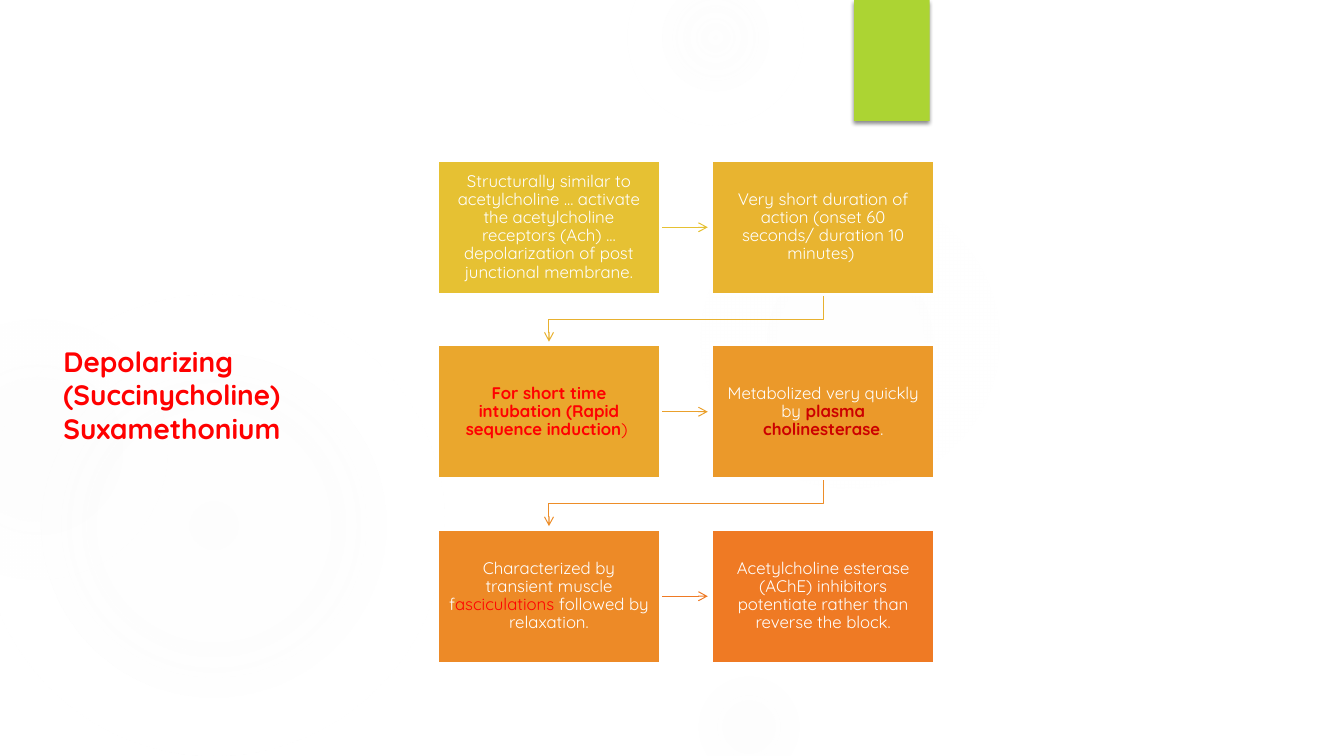
from lxml import etree
from pptx import Presentation
from pptx.dml.color import RGBColor
from pptx.enum.shapes import MSO_CONNECTOR, MSO_SHAPE
from pptx.enum.text import MSO_ANCHOR, PP_ALIGN
from pptx.oxml import parse_xml
from pptx.oxml.ns import nsdecls, qn
from pptx.util import Inches, Pt

OVAL, RECTANGLE = MSO_SHAPE.OVAL, MSO_SHAPE.RECTANGLE
STRAIGHT = MSO_CONNECTOR.STRAIGHT
MIDDLE = MSO_ANCHOR.MIDDLE
LEFT, CENTER = PP_ALIGN.LEFT, PP_ALIGN.CENTER
RIGHT_SIDE = 3

FONT = "Quicksand"
WHITE = RGBColor(0xFF, 0xFF, 0xFF)
RED = RGBColor(0xFF, 0x00, 0x00)
DARK_RED = RGBColor(0xCC, 0x00, 0x00)
GREEN = RGBColor(0xAC, 0xD4, 0x33)
GLOW = "F7F7F7"

# Content
TITLE = ["Depolarizing (Succinycholine)", "Suxamethonium"]

# Each step: fill, then runs of (text, colour, bold)
STEPS = [
    (RGBColor(0xE6, 0xC1, 0x33), [
        ("Structurally similar to acetylcholine … activate the acetylcholine "
         "receptors (Ach) … depolarization of post junctional membrane.", WHITE, False)]),
    (RGBColor(0xE8, 0xB4, 0x30), [
        ("Very short duration of action (onset 60 seconds/ duration 10 minutes) ",
         WHITE, False)]),
    (RGBColor(0xEA, 0xA7, 0x2D), [
        ("For short time intubation (Rapid sequence induction", RED, True),
        (") ", RED, False)]),
    (RGBColor(0xEB, 0x99, 0x2A), [
        ("Metabolized very quickly by ", WHITE, False),
        ("plasma cholinesterase", DARK_RED, True),
        (".", WHITE, False)]),
    (RGBColor(0xED, 0x8A, 0x27), [
        ("Characterized by transient muscle f", WHITE, False),
        ("asciculations ", RED, False),
        ("followed by relaxation.", WHITE, False)]),
    (RGBColor(0xEF, 0x7A, 0x24), [
        ("Acetylcholine esterase (AChE) inhibitors potentiate rather than "
         "reverse the block.", WHITE, False)]),
]
ARROW_COLORS = [
    RGBColor(0xE6, 0xC1, 0x33), RGBColor(0xE8, 0xB1, 0x2F), RGBColor(0xEA, 0xA0, 0x2C),
    RGBColor(0xED, 0x8D, 0x28), RGBColor(0xEF, 0x7A, 0x24),
]

# Background circles: left, top, diameter, (position %, opacity %) stops
CIRCLES = [
    (6.89, 1.83, 3.08, [(0, 7), (36, 6), (69, 0)]),
    (6.22, -0.5, 1.75, [(0, 14), (36, 7), (73, 0)]),
    (6.89, 6.67, 1.08, [(0, 14), (36, 7), (66, 0)]),
    (-0.17, 2.92, 4.58, [(0, 11), (36, 10), (75, 0)]),
    (-0.92, 3.17, 2.58, [(0, 8), (36, 8), (72, 0)]),
]

# Step grid, in inches
COLUMNS = 2
GRID_LEFT, GRID_TOP = 4.34, 1.59
BOX_WIDTH, BOX_HEIGHT = 2.21, 1.33
COLUMN_PITCH, ROW_PITCH = 2.72, 1.83
ARROW_LENGTH = 0.47


def add_plain_shape(page, kind, left, top, width, height):
    shape = page.shapes.add_shape(
        kind, Inches(left), Inches(top), Inches(width), Inches(height))
    shape.shadow.inherit = False
    shape.line.fill.background()
    return shape


def add_circle(page, left, top, size, stops):
    circle = add_plain_shape(page, OVAL, left, top, size, size)
    stop_xml = "".join(
        f'<a:gs pos="{place * 1000}"><a:srgbClr val="{GLOW}">'
        f'<a:alpha val="{opacity * 1000}"/></a:srgbClr></a:gs>'
        for place, opacity in stops)
    gradient = parse_xml(
        f'<a:gradFill {nsdecls("a")}><a:gsLst>{stop_xml}</a:gsLst>'
        '<a:path path="circle"><a:fillToRect l="50000" t="50000" r="50000" '
        'b="50000"/></a:path></a:gradFill>')
    circle.fill.background()
    properties = circle.element.spPr
    properties.replace(properties.find(qn("a:noFill")), gradient)


def add_span(para, text, size, color, bold):
    span = para.add_run()
    span.text = text
    span.font.name = FONT
    span.font.size = Pt(size)
    span.font.bold = bold
    span.font.color.rgb = color


def style_arrow(arrow, color):
    arrow.line.color.rgb = color
    arrow.line.width = Pt(0.75)
    etree.SubElement(arrow.line._get_or_add_ln(), qn("a:tailEnd"), type="arrow")


def box_corner(index):
    row, column = divmod(index, COLUMNS)
    return GRID_LEFT + column * COLUMN_PITCH, GRID_TOP + row * ROW_PITCH


def add_across_arrow(page, index):
    left, top = box_corner(index)
    start, middle = left + BOX_WIDTH, top + BOX_HEIGHT / 2
    arrow = page.shapes.add_connector(
        STRAIGHT, Inches(start), Inches(middle),
        Inches(start + ARROW_LENGTH), Inches(middle))
    etree.SubElement(arrow._element.spPr, qn("a:effectLst"))
    return arrow


def add_return_arrow(page, index):
    left, top = box_corner(index)
    start_x, start_y = left + BOX_WIDTH / 2, top + BOX_HEIGHT
    end_x, end_y = start_x - COLUMN_PITCH, start_y + ARROW_LENGTH
    turn_y = start_y + (ROW_PITCH - BOX_HEIGHT) / 2
    builder = page.shapes.build_freeform(Inches(start_x), Inches(start_y))
    corners = [(start_x, turn_y), (end_x, turn_y), (end_x, end_y)]
    builder.add_line_segments(
        [(Inches(x), Inches(y)) for x, y in corners], close=False)
    arrow = builder.convert_to_shape()
    arrow.shadow.inherit = False
    arrow.fill.background()
    return arrow


def add_step(page, index, fill, runs):
    box = add_plain_shape(page, RECTANGLE, *box_corner(index), BOX_WIDTH, BOX_HEIGHT)
    box.fill.solid()
    box.fill.fore_color.rgb = fill
    box.line.color.rgb = WHITE
    box.line.width = Pt(2.25)
    frame = box.text_frame
    frame.word_wrap = True
    frame.vertical_anchor = MIDDLE
    frame.margin_left = frame.margin_right = Inches(0.11)
    frame.margin_top = frame.margin_bottom = Inches(0.11)
    para = frame.paragraphs[0]
    para.alignment = CENTER
    para.line_spacing = 0.9
    for text, color, bold in runs:
        add_span(para, text, 12, color, bold)
    return box


def main():
    deck = Presentation()
    deck.slide_width, deck.slide_height = Inches(13.33), Inches(7.5)
    page = deck.slides.add_slide(deck.slide_layouts[6])

    # Background circles and green tab
    for circle in CIRCLES:
        add_circle(page, *circle)
    tab = add_plain_shape(page, RECTANGLE, 8.47, 0, 0.75, 1.2)
    tab.fill.solid()
    tab.fill.fore_color.rgb = GREEN
    tab.element.spPr.find(qn("a:effectLst")).append(parse_xml(
        f'<a:outerShdw {nsdecls("a")} blurRad="{Pt(3)}" dist="{Pt(2)}" dir="5400000" '
        'rotWithShape="0"><a:srgbClr val="000000"><a:alpha val="45000"/>'
        '</a:srgbClr></a:outerShdw>'))

    # Title, raised by one line through the bottom margin
    title = page.shapes.add_textbox(Inches(0.53), Inches(1.58), Inches(2.55), Inches(5))
    title.text_frame.word_wrap = True
    title.text_frame.vertical_anchor = MIDDLE
    title.text_frame.margin_bottom = Inches(0.38)
    para = title.text_frame.paragraphs[0]
    para.alignment = LEFT
    for number, line in enumerate(TITLE):
        if number:
            para.add_line_break()
        add_span(para, line, 20, RED, True)

    # Arrows lie behind the boxes, whose white outlines trim their starts
    arrows = []
    for index, color in enumerate(ARROW_COLORS):
        ends_row = index % COLUMNS == COLUMNS - 1
        arrow = (add_return_arrow if ends_row else add_across_arrow)(page, index)
        style_arrow(arrow, color)
        arrows.append(arrow)

    # Steps
    boxes = [add_step(page, index, *step) for index, step in enumerate(STEPS)]
    for arrow, box in list(zip(arrows, boxes))[::COLUMNS]:
        arrow.begin_connect(box, RIGHT_SIDE)

    deck.save("out.pptx")


if __name__ == "__main__":
    main()
